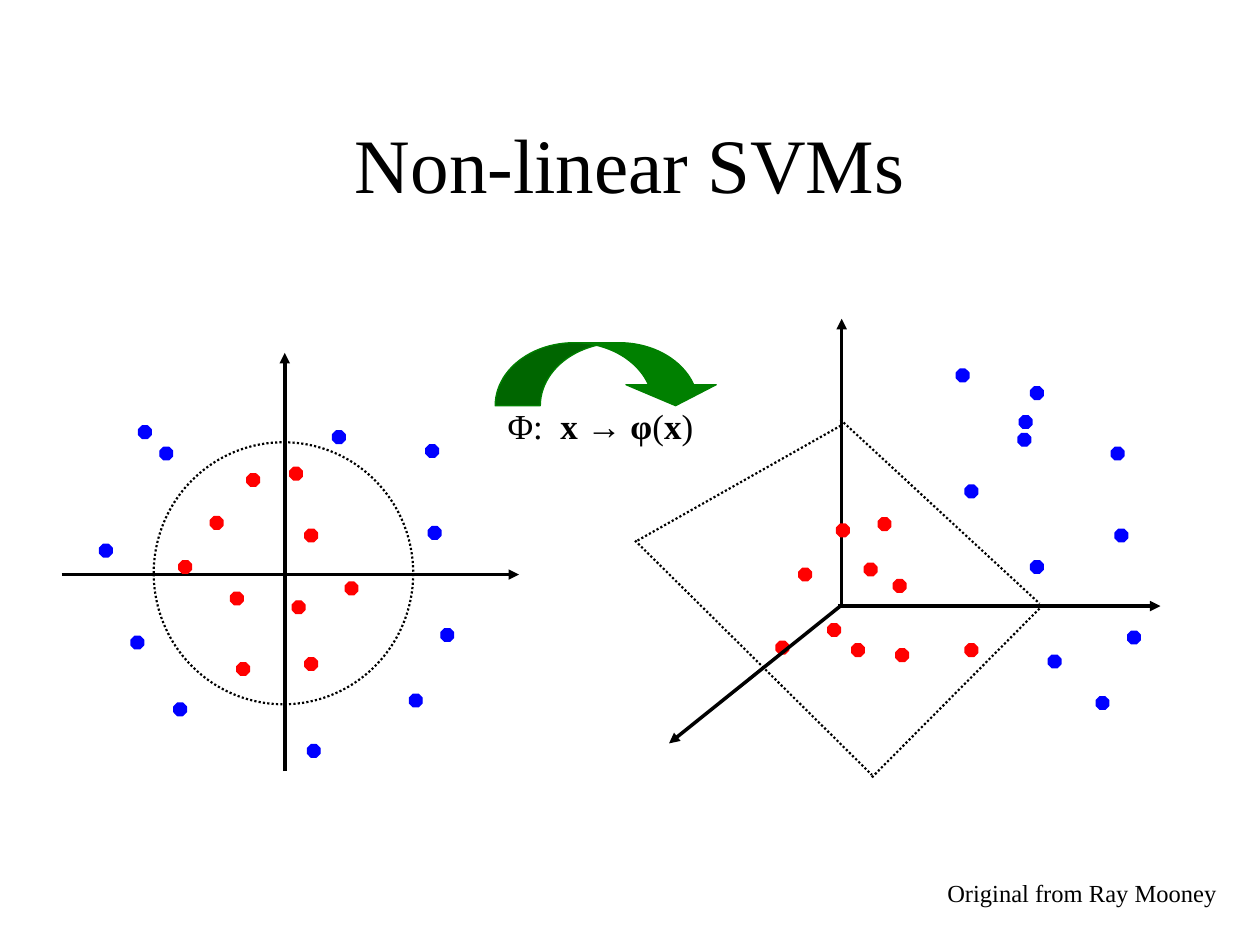
from pptx import Presentation
from pptx.dml.color import RGBColor
from pptx.enum.dml import MSO_LINE
from pptx.enum.shapes import MSO_CONNECTOR, MSO_SHAPE
from pptx.enum.text import MSO_ANCHOR, MSO_AUTO_SIZE, PP_ALIGN
from pptx.oxml.ns import qn
from pptx.util import Inches, Pt
from lxml.etree import SubElement

INK = {"black": "000000", "red": "FF0000", "blue": "0000FF", "green": "008000"}
COLOR = {name: RGBColor.from_string(code) for name, code in INK.items()}
FONT = "Times New Roman"
DOT = 0.1


def draw_line(start, end, arrow):
    """Draw a solid axis with an arrowhead, or a dotted border."""
    ends = [Inches(n) for n in (*start, *end)]
    line = slide.shapes.add_connector(MSO_CONNECTOR.STRAIGHT, *ends)
    line.line.color.rgb = COLOR["black"]
    line.line.width = Pt(2 if arrow else 1.25)
    if arrow:
        SubElement(line.line._get_or_add_ln(), qn("a:tailEnd"), type="triangle")
    else:
        line.line.dash_style = MSO_LINE.ROUND_DOT
    SubElement(line._element.spPr, qn("a:effectLst"))


def draw_shape(kind, box, color):
    """Draw a filled shape with a thin line of the same color."""
    shape = slide.shapes.add_shape(kind, *[Inches(n) for n in box])
    shape.shadow.inherit = False
    shape.fill.solid()
    shape.fill.fore_color.rgb = COLOR[color]
    shape.line.color.rgb = COLOR[color]
    shape.line.width = Pt(0.75)
    return shape


deck = Presentation()
deck.slide_width, deck.slide_height = Inches(10), Inches(7.5)
slide = deck.slides.add_slide(deck.slide_layouts[5])

# Title
title = slide.shapes.title
title.left, title.top = Inches(0.75), Inches(0.67)
title.width, title.height = Inches(8.5), Inches(1.25)
title.text_frame.text = "Non-linear SVMs"
title.text_frame.vertical_anchor = MSO_ANCHOR.MIDDLE
head = title.text_frame.paragraphs[0]
head.alignment = PP_ALIGN.CENTER
head.font.name, head.font.size = FONT, Pt(44)
head.font.color.rgb = COLOR["black"]

# Axes of the input space
draw_line((2.26, 6.12), (2.26, 2.8), True)
draw_line((0.49, 4.56), (4.12, 4.56), True)

# Circle that parts the two classes
ring = draw_shape(MSO_SHAPE.OVAL, (1.22, 3.51, 2.06, 2.08), "black")
ring.fill.background()
ring.line.width = Pt(1.25)
ring.line.dash_style = MSO_LINE.ROUND_DOT

# Upright and level axes of the feature space
draw_line((6.68, 4.79), (6.68, 2.53), True)
draw_line((6.65, 4.81), (9.21, 4.81), True)

# Data points: input space, then feature space
points = [
    ("red", [(2.3, 3.71), (1.67, 4.1), (1.83, 4.7), (2.42, 5.22), (1.96, 3.76),
             (1.42, 4.45), (1.88, 5.26), (2.42, 4.2), (2.74, 4.62), (2.32, 4.77)]),
    ("blue", [(3.4, 4.18), (3.25, 5.51), (0.79, 4.32), (2.44, 5.91), (3.5, 4.99),
              (1.38, 5.58), (1.04, 5.05), (1.1, 3.38), (2.64, 3.42), (1.27, 3.55),
              (3.38, 3.53)]),
    ("red", [(6.97, 4.11), (6.34, 4.51), (6.76, 5.11), (7.66, 5.11), (6.64, 4.16),
             (6.86, 4.47), (7.11, 5.15), (7.09, 4.6), (6.57, 4.95), (6.16, 5.09)]),
    ("blue", [(8.85, 4.2), (8.7, 5.53), (8.18, 3.07), (8.18, 4.45), (8.95, 5.01),
              (7.66, 3.85), (8.32, 5.2), (8.09, 3.3), (8.08, 3.44), (7.59, 2.93),
              (8.82, 3.55)]),
]
for color, spots in points:
    for left, top in spots:
        draw_shape(MSO_SHAPE.OCTAGON, (left, top, DOT, DOT), color)

# Slanted axis and the plane that parts the classes
draw_line((6.67, 4.81), (5.31, 5.9), True)
for start, end in [((6.67, 3.33), (8.25, 4.79)), ((6.92, 6.17), (8.25, 4.83)),
                   ((5.06, 4.29), (6.67, 3.38)), ((5.04, 4.29), (6.92, 6.15))]:
    draw_line(start, end, False)

# Mapping arrow
arrow = draw_shape(MSO_SHAPE.CURVED_DOWN_ARROW, (3.93, 2.72, 1.79, 0.5), "green")
for index, value in enumerate((0.717, 1.433, 0.333)):
    arrow.adjustments[index] = value

# Formula and credit
formula = [("Φ:  ", False), ("x → φ", True), ("(", False), ("x", True), (")", False)]
credit = [("Original from Ray Mooney", False)]
for box, size, wrap, parts in [((3.93, 3.16, 1.84, 0.43), 20, True, formula),
                               ((7.42, 6.92, 2.36, 0.34), 14, False, credit)]:
    frame = slide.shapes.add_textbox(*[Inches(n) for n in box]).text_frame
    frame.word_wrap = wrap
    frame.auto_size = MSO_AUTO_SIZE.SHAPE_TO_FIT_TEXT
    para = frame.paragraphs[0]
    para.font.name, para.font.size = FONT, Pt(size)
    para.font.color.rgb = COLOR["black"]
    for text, bold in parts:
        run = para.add_run()
        run.text = text
        run.font.bold = bold

deck.save("out.pptx")
